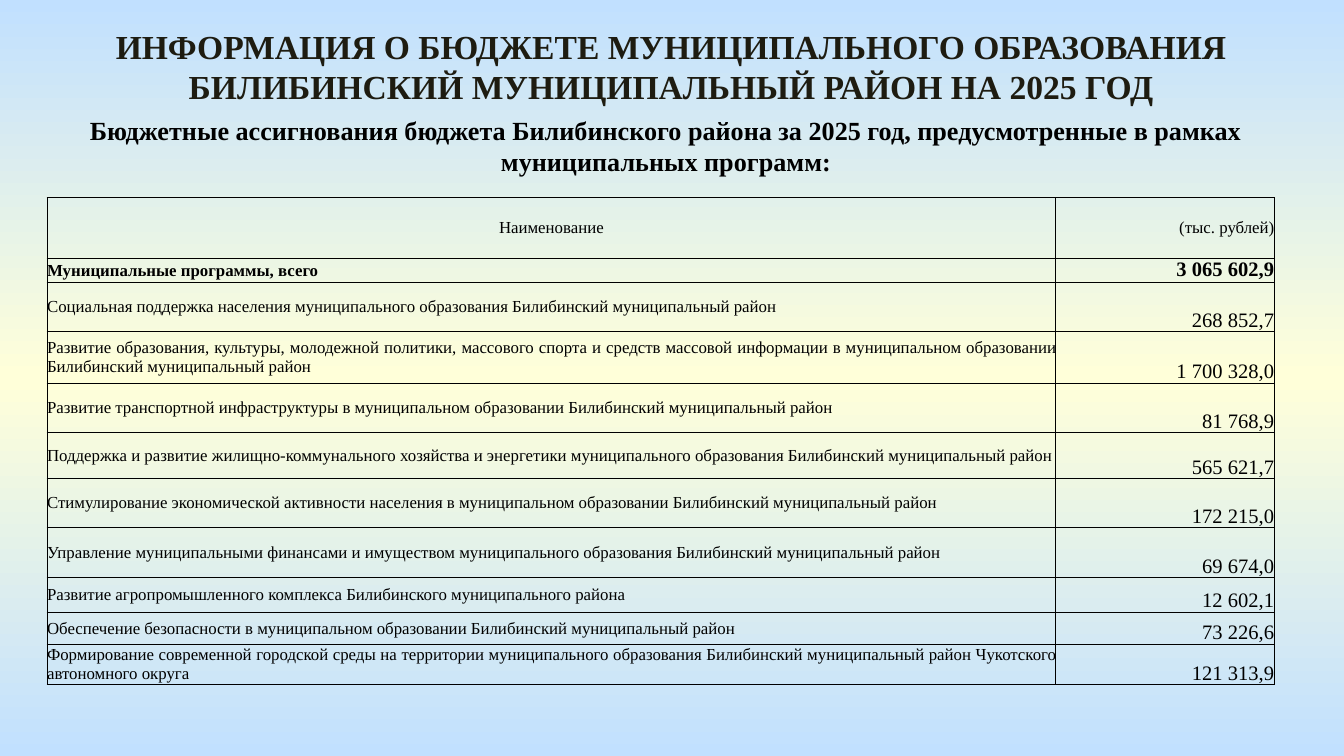
from copy import deepcopy
from lxml.etree import SubElement
from pptx import Presentation
from pptx.dml.color import RGBColor
from pptx.enum.text import MSO_ANCHOR, PP_ALIGN
from pptx.oxml.ns import qn
from pptx.util import Cm, Pt


def rgb(value):
    return RGBColor.from_string(value)


def write(tf, text, size, color="000000", bold=False, align=PP_ALIGN.CENTER):
    tf.word_wrap = True
    tf.text = text
    p = tf.paragraphs[0]
    p.alignment = align
    font = p.runs[0].font
    font.name = "Times New Roman"
    font.size = Pt(size)
    font.bold = bold
    font.color.rgb = rgb(color)


prs = Presentation()
prs.slide_width = Cm(25.4)
prs.slide_height = Cm(14.29)
s = prs.slides.add_slide(prs.slide_layouts[6])

fill = s.background.fill
fill.gradient()
fill.gradient_angle = 270
gs_list = next(s.element.iter(qn("a:gsLst")))
gs_list.insert(1, deepcopy(gs_list[0]))
for stop, position, color in zip(fill.gradient_stops, (0, 0.5, 1), ("C1E0FF", "FFFFD9", "C1E0FF")):
    stop.position = position
    stop.color.rgb = rgb(color)

title = s.shapes.add_textbox(Cm(0.89), Cm(0.36), Cm(23.6), Cm(1.8))
write(
    title.text_frame,
    "ИНФОРМАЦИЯ О БЮДЖЕТЕ МУНИЦИПАЛЬНОГО ОБРАЗОВАНИЯ "
    "БИЛИБИНСКИЙ МУНИЦИПАЛЬНЫЙ РАЙОН НА 2025 ГОД",
    18, "1E1C11", True,
)
subtitle = s.shapes.add_textbox(Cm(0.78), Cm(2.03), Cm(23.62), Cm(1.45))
write(
    subtitle.text_frame,
    "Бюджетные ассигнования бюджета Билибинского района за 2025 год, "
    "предусмотренные в рамках муниципальных программ:",
    14, bold=True,
)

rows = [
    ("Наименование", "(тыс. рублей)", 1.14),
    ("Муниципальные программы, всего", "3 065 602,9", 0.46),
    ("Социальная поддержка населения муниципального образования Билибинский муниципальный район", "268 852,7", 0.92),
    ("Развитие образования, культуры, молодежной политики, массового спорта и средств массовой информации "
     "в муниципальном образовании Билибинский муниципальный район", "1 700 328,0", 0.98),
    ("Развитие транспортной инфраструктуры в муниципальном образовании Билибинский муниципальный район",
     "81 768,9", 0.93),
    ("Поддержка и развитие жилищно-коммунального хозяйства и энергетики муниципального образования "
     "Билибинский муниципальный район", "565 621,7", 0.87),
    ("Стимулирование экономической активности населения в муниципальном образовании "
     "Билибинский муниципальный район", "172 215,0", 0.93),
    ("Управление муниципальными финансами и имуществом муниципального образования "
     "Билибинский муниципальный район", "69 674,0", 0.94),
    ("Развитие агропромышленного комплекса Билибинского муниципального района", "12 602,1", 0.66),
    ("Обеспечение безопасности в муниципальном образовании Билибинский муниципальный район", "73 226,6", 0.6),
    ("Формирование современной городской среды на территории муниципального образования "
     "Билибинский муниципальный район Чукотского автономного округа", "121 313,9", 0.61),
]
height = sum(row[2] for row in rows)
table = s.shapes.add_table(len(rows), 2, Cm(0.89), Cm(3.74), Cm(23.19), Cm(height)).table
table.first_row = False
table.horz_banding = False
table.columns[0].width = Cm(19.06)
table.columns[1].width = Cm(4.13)

name_aligns = [PP_ALIGN.CENTER, PP_ALIGN.LEFT] + [PP_ALIGN.JUSTIFY] * 9
value_anchors = [MSO_ANCHOR.MIDDLE, MSO_ANCHOR.TOP] + [MSO_ANCHOR.BOTTOM] * 9
for i, (name, value, row_height) in enumerate(rows):
    table.rows[i].height = Cm(row_height)
    name_cell, value_cell = table.cell(i, 0), table.cell(i, 1)
    write(name_cell.text_frame, name, 9, bold=i == 1, align=name_aligns[i])
    write(value_cell.text_frame, value, 11 if i else 9, bold=i == 1, align=PP_ALIGN.RIGHT)
    name_cell.vertical_anchor = MSO_ANCHOR.MIDDLE
    value_cell.vertical_anchor = value_anchors[i]
    for cell in (name_cell, value_cell):
        cell.margin_left = cell.margin_right = cell.margin_top = cell.margin_bottom = 0
        tc_pr = cell._tc.get_or_add_tcPr()
        for side in ("a:lnL", "a:lnR", "a:lnT", "a:lnB"):
            ln = SubElement(tc_pr, qn(side), w=str(Pt(0.5)))
            solid = SubElement(ln, qn("a:solidFill"))
            SubElement(solid, qn("a:srgbClr"), val="000000")
        cell.fill.background()

prs.save("out.pptx")
